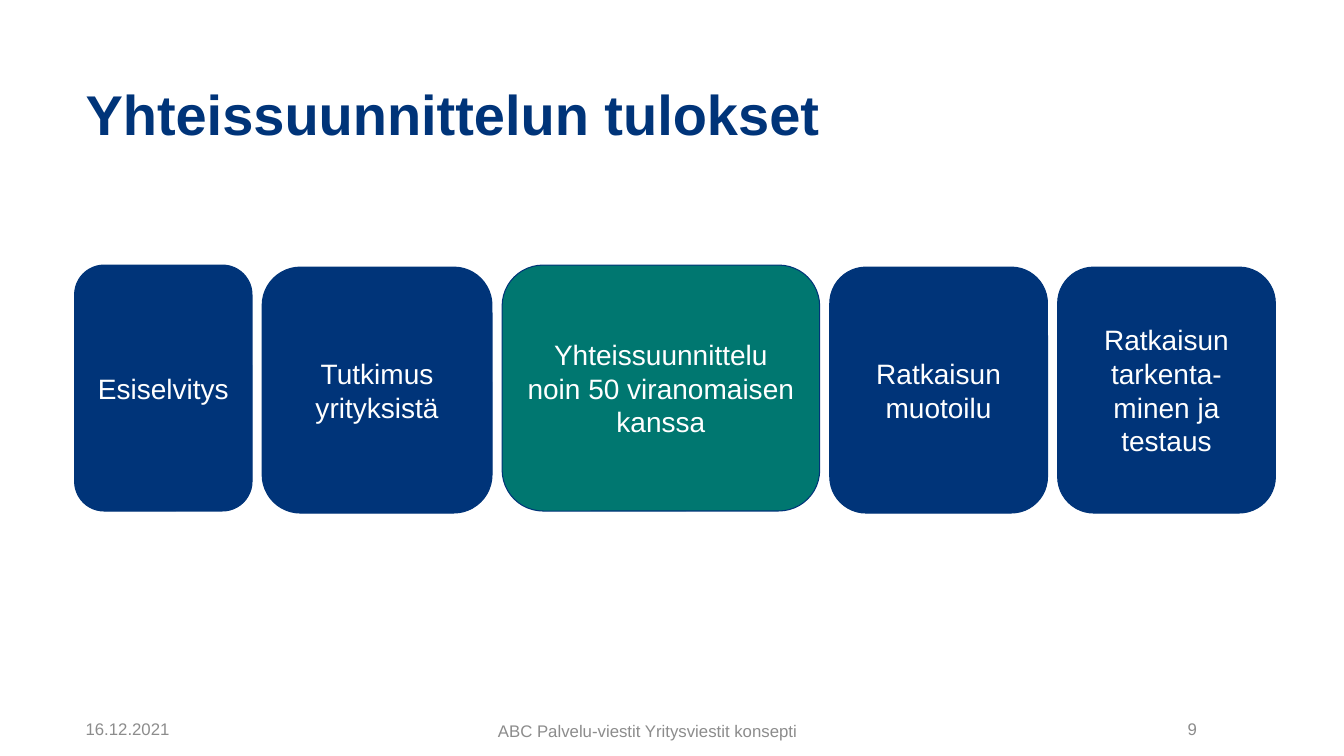
from pptx import Presentation
from pptx.dml.color import RGBColor
from pptx.enum.shapes import MSO_SHAPE as Shape
from pptx.enum.text import MSO_ANCHOR as Anchor, PP_ALIGN as Align
from pptx.util import Inches, Pt

NAVY, TEAL, GREY, WHITE = "003479", "007770", "8C8C8C", "FFFFFF"
GAP = 0.1
STEPS = [
    ("Esiselvitys", 1.76, 0, NAVY),
    ("Tutkimus yrityksistä", 2.28, 0.02, NAVY),
    ("Yhteissuunnittelu noin 50 viranomaisen kanssa", 3.15, 0, TEAL),
    ("Ratkaisun muotoilu", 2.16, 0.02, NAVY),
    ("Ratkaisun tarkenta-minen ja testaus", 2.16, 0.02, NAVY),
]


def color(code):
    """Turn a hex string into a colour."""
    return RGBColor.from_string(code)


def write(shape, text, size, code, align=Align.LEFT, anchor=Anchor.MIDDLE, bold=False):
    """Set the text of a shape and style it."""
    frame = shape.text_frame
    frame.word_wrap = True
    frame.vertical_anchor = anchor
    para = frame.paragraphs[0]
    para.text = text
    para.alignment = align
    font = para.font
    font.name, font.size, font.bold = "Arial", Pt(size), bold
    font.color.rgb = color(code)


def label(slide, box, *args, **style):
    """Add a text box at the given box."""
    write(slide.shapes.add_textbox(*map(Inches, box)), *args, **style)


def title(slide, box):
    """Add the heading at the foot of its box."""
    label(slide, box, "Yhteissuunnittelun tulokset", 40, NAVY, anchor=Anchor.BOTTOM, bold=True)


def steps(slide, left, top, height):
    """Add the row of process steps from left to right."""
    for text, width, drop, fill in STEPS:
        box = (left, top + drop, width, height)
        card = slide.shapes.add_shape(Shape.ROUNDED_RECTANGLE, *map(Inches, box))
        card.shadow.inherit = False
        card.fill.solid()
        card.fill.fore_color.rgb = color(fill)
        card.line.color.rgb = color(NAVY)
        card.line.width = Pt(0.75)
        write(card, text, 20, WHITE, Align.CENTER)
        left += width + GAP


def footer(slide, left, top, width, height):
    """Add the date, the deck name and the page number."""
    label(slide, (left, top, 1.65, height), "16.12.2021", 12, GREY)
    label(slide, (left + 4.09, top - 0.06, 3.66, 0.39),
          "ABC Palvelu-viestit Yritysviestit konsepti", 12, GREY)
    label(slide, (left + width - 0.91, top, 0.91, height), "9", 12, GREY, Align.RIGHT)


def main():
    """Build and save the slide."""
    deck = Presentation()
    deck.slide_width, deck.slide_height = Inches(13.33), Inches(7.5)
    slide = deck.slides.add_slide(deck.slide_layouts[6])
    title(slide, (0.75, 0.16, 11.22, 1.34))
    steps(slide, 0.74, 2.63, 2.44)
    footer(slide, 0.75, 7.11, 11.22, 0.24)
    deck.save("out.pptx")


if __name__ == "__main__":
    main()
